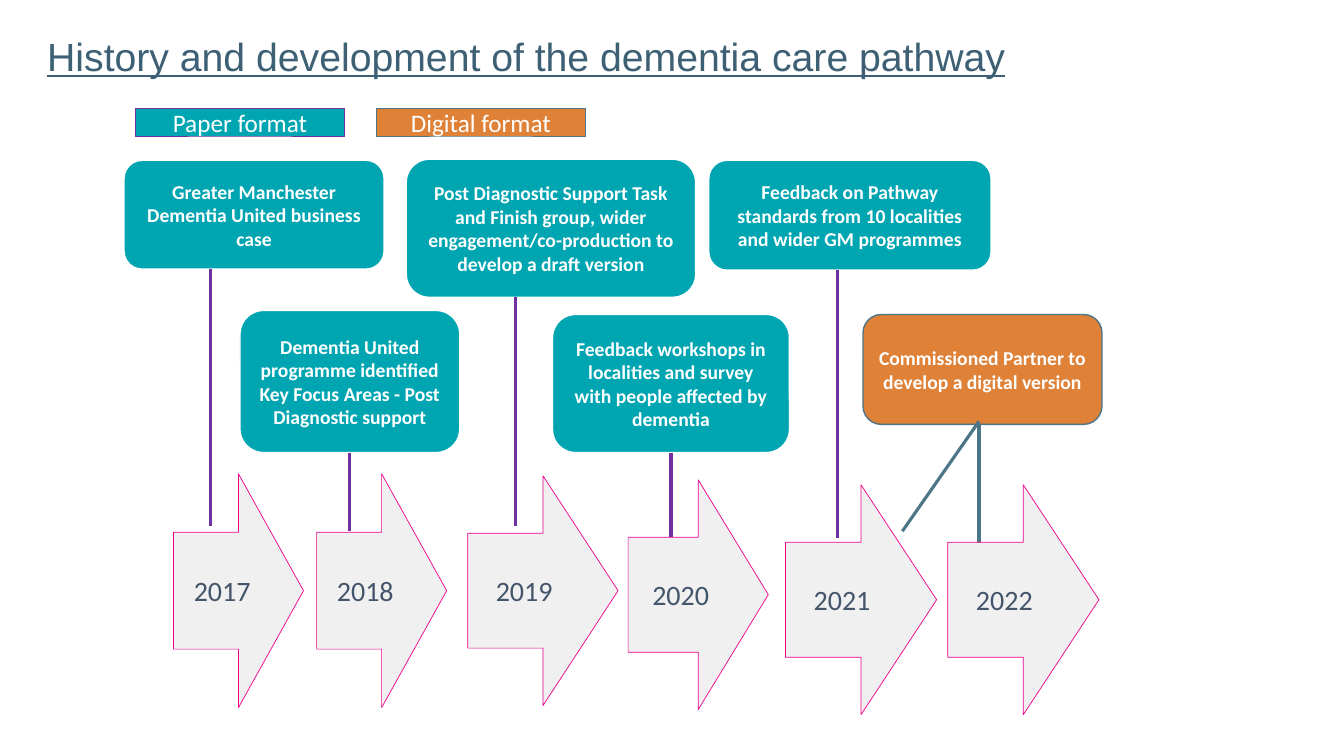
from lxml.etree import SubElement
from pptx import Presentation
from pptx.dml.color import RGBColor
from pptx.enum.shapes import MSO_CONNECTOR, MSO_SHAPE
from pptx.enum.text import MSO_ANCHOR, PP_ALIGN
from pptx.oxml.ns import qn
from pptx.util import Inches, Pt

TEAL, ORANGE, PURPLE, SLATE = "00A5B2", "DF8238", "7030A0", "4C7588"
WHITE, GREY, PINK, NAVY, TITLE = "FFFFFF", "F0F0F0", "EC008D", "44546A", "3D6074"

# label, box (left, top, width, height)
KEYS = [
    ("Paper format", TEAL, PURPLE),
    ("Digital format", ORANGE, SLATE),
]
# text, box, fill, outline, stem colour, stem x (None: middle of the box), stem end
MILESTONES = [
    ("Greater Manchester Dementia United business case",
     (1.23, 1.59, 2.58, 1.08), TEAL, WHITE, PURPLE, 2.09, 5.22),
    ("Dementia United programme identified Key Focus Areas - Post Diagnostic support",
     (2.38, 3.08, 2.18, 1.41), TEAL, WHITE, PURPLE, None, 5.27),
    ("Post Diagnostic Support Task and Finish group, wider "
     "engagement/co-production to develop a draft version",
     (4.03, 1.58, 2.87, 1.37), TEAL, WHITE, PURPLE, 5.11, 5.22),
    ("Feedback workshops in localities and survey with people affected by dementia",
     (5.48, 3.12, 2.35, 1.37), TEAL, WHITE, PURPLE, None, 5.34),
    ("Feedback on Pathway standards from 10 localities and wider GM programmes",
     (7.03, 1.59, 2.8, 1.09), TEAL, WHITE, PURPLE, 8.31, 5.34),
    ("Commissioned Partner to develop a digital version",
     (8.56, 3.12, 2.37, 1.09), ORANGE, SLATE, SLATE, 9.71, 5.52),
]
FIRST_YEAR = 2017
YEAR_BOXES = [
    (1.72, 4.7, 1.29, 2.32),
    (3.14, 4.7, 1.29, 2.32),
    (4.64, 4.72, 1.49, 2.28),
    (6.23, 4.76, 1.39, 2.28),
    (7.79, 4.81, 1.5, 2.28),
    (9.4, 4.81, 1.5, 2.28),
]


def colour(code):
    return RGBColor.from_string(code)


def inches(values):
    return [Inches(value) for value in values]


def write(shape, text, text_colour, align=PP_ALIGN.CENTER, **font_format):
    frame = shape.text_frame
    frame.word_wrap = True
    frame.vertical_anchor = MSO_ANCHOR.MIDDLE
    para = frame.paragraphs[0]
    para.alignment = align
    span = para.add_run()
    span.text = text
    span.font.color.rgb = colour(text_colour)
    for name, value in font_format.items():
        setattr(span.font, name, value)
    return para


def add_block(page, kind, box, fill, outline, line_width):
    block = page.shapes.add_shape(kind, *inches(box))
    block.shadow.inherit = False
    block.fill.solid()
    block.fill.fore_color.rgb = colour(fill)
    block.line.color.rgb = colour(outline)
    block.line.width = Pt(line_width)
    return block


def add_line(page, start, end, line_colour):
    line = page.shapes.add_connector(MSO_CONNECTOR.STRAIGHT, *inches(start + end))
    line.line.color.rgb = colour(line_colour)
    line.line.width = Pt(2.25)
    SubElement(line._element.spPr, qn("a:effectLst"))
    return line


def add_title(page, box):
    title = page.shapes.add_textbox(*inches(box))
    para = write(title, "History and development of the dementia care pathway", TITLE,
                 PP_ALIGN.LEFT, name="Arial", size=Pt(28), underline=True)
    para.line_spacing = 0.9


def add_legend(page, left, top, width, height, pitch):
    for index, (label, fill, outline) in enumerate(KEYS):
        box = (left + index * pitch, top, width, height)
        key = add_block(page, MSO_SHAPE.RECTANGLE, box, fill, outline, 0.5)
        write(key, label, WHITE, name="Calibri", size=Pt(18))


def add_milestone(page, box, text, fill, outline, stem_colour, stem_x, stem_end):
    """Rounded box with a stem running down towards its year."""
    left, top, width, height = box
    block = add_block(page, MSO_SHAPE.ROUNDED_RECTANGLE, box, fill, outline, 1)
    write(block, text, WHITE, name="Calibri", size=Pt(14), bold=True)
    x = left + width / 2 if stem_x is None else stem_x
    stem = add_line(page, (x, top + height), (x, stem_end), stem_colour)
    if stem_x is None:
        stem.begin_connect(block, 2)


def add_year(page, box, year):
    arrow = add_block(page, MSO_SHAPE.RIGHT_ARROW, box, GREY, PINK, 0.5)
    write(arrow, str(year), NAVY, name="Calibri", size=Pt(20))


def main():
    deck = Presentation()
    deck.slide_width, deck.slide_height = inches((13.33, 7.5))
    page = deck.slides.add_slide(deck.slide_layouts[6])
    add_title(page, (0.37, 0.3, 11.5, 0.57))
    for text, box, *style in MILESTONES:
        add_milestone(page, box, text, *style)
    for year, box in enumerate(YEAR_BOXES, FIRST_YEAR):
        add_year(page, box, year)
    add_line(page, (8.95, 5.27), (9.71, 4.18), SLATE)
    add_legend(page, 1.34, 1.08, 2.08, 0.27, pitch=2.39)
    deck.save("out.pptx")


if __name__ == "__main__":
    main()
